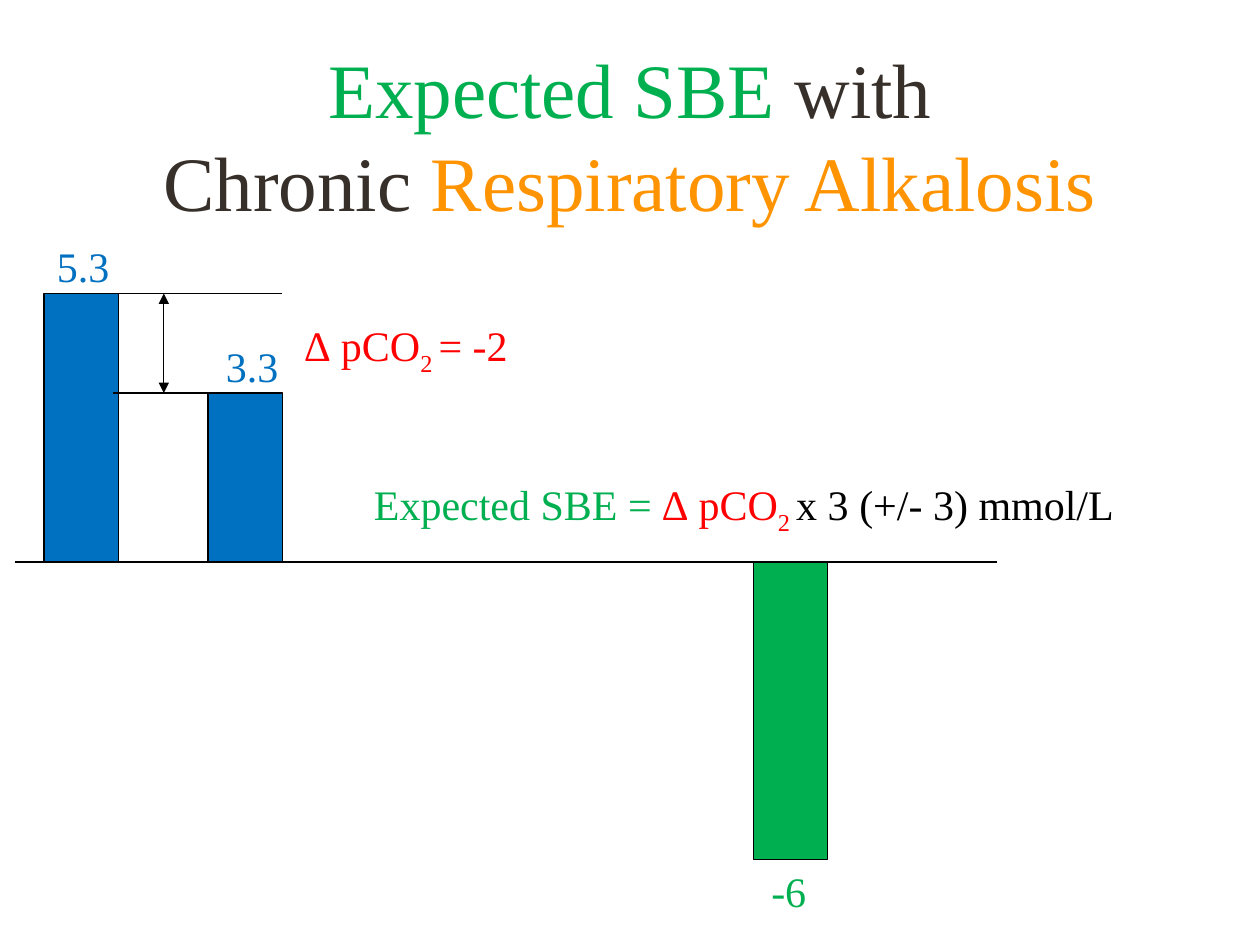
"""Build the slide on expected SBE with chronic respiratory alkalosis."""
from dataclasses import dataclass

import pptx
import pptx.dml.color
import pptx.enum.shapes
import pptx.enum.text
import pptx.util
from lxml import etree
from pptx.util import Inches


@dataclass(frozen=True)
class Theme:
    font: str = "Times New Roman"
    title_size: int = 44
    body_size: int = 24
    line_width: float = 0.75
    green: str = "00B050"
    blue: str = "0070C0"
    red: str = "FF0000"
    orange: str = "FF9300"
    brown: str = "37302A"
    black: str = "000000"


theme = Theme()
rgb = pptx.dml.color.RGBColor.from_string
drawing_ns = "{http://schemas.openxmlformats.org/drawingml/2006/main}"
align = pptx.enum.text.PP_ALIGN

deck = pptx.Presentation()
deck.slide_width, deck.slide_height = Inches(10), Inches(7.5)
slide = deck.slides.add_slide(deck.slide_layouts[6])


def add_text(place, lines, size=theme.body_size, alignment=align.CENTER, wrap=False):
    box = slide.shapes.add_textbox(*map(Inches, place))
    frame = box.text_frame
    frame.word_wrap = wrap
    paragraph = frame.paragraphs[0]
    paragraph.alignment = alignment
    for index, line in enumerate(lines):
        if index:
            paragraph.add_line_break()
        for wording, color, *baseline in line:
            run = paragraph.add_run()
            run.text = wording
            run.font.name = theme.font
            run.font.size = pptx.util.Pt(size)
            run.font.color.rgb = rgb(color)
            if baseline:
                run.font._element.set("baseline", str(baseline[0]))
    return frame


def add_line(start, end):
    line = slide.shapes.add_connector(
        pptx.enum.shapes.MSO_CONNECTOR.STRAIGHT, *map(Inches, start + end))
    line.line.color.rgb = rgb(theme.black)
    line.line.width = pptx.util.Pt(theme.line_width)
    etree.SubElement(line._element.spPr, drawing_ns + "effectLst")
    return line


title = add_text(
    (0, 0.44, 10, 1.25),
    [[("Expected SBE ", theme.green), ("with", theme.brown)],
     [("Chronic ", theme.brown), ("Respiratory Alkalosis", theme.orange)]],
    size=theme.title_size, wrap=True)
title.vertical_anchor = pptx.enum.text.MSO_ANCHOR.MIDDLE

baseline_y, normal_y, lowered_y = 4.46, 2.33, 3.12
bar_width = 0.59
bars = [
    (0.35, normal_y, baseline_y, theme.blue),
    (1.65, lowered_y, baseline_y, theme.blue),
    (5.98, baseline_y, 6.82, theme.green),
]
for left, top, bottom, color in bars:
    bar = slide.shapes.add_shape(
        pptx.enum.shapes.MSO_SHAPE.RECTANGLE,
        *map(Inches, (left, top, bar_width, bottom - top)))
    bar.shadow.inherit = False
    bar.fill.solid()
    bar.fill.fore_color.rgb = rgb(color)
    bar.line.color.rgb = rgb(theme.black)
    bar.line.width = pptx.util.Pt(theme.line_width)

add_line((0.12, baseline_y), (7.91, baseline_y))
add_line((0.35, normal_y), (2.24, normal_y))
add_line((0.9, lowered_y), (2.2, lowered_y))
difference = add_line((1.3, lowered_y), (1.3, normal_y))
for arrow_end in ("headEnd", "tailEnd"):
    etree.SubElement(difference.line._get_or_add_ln(), drawing_ns + arrow_end, type="triangle")

bar_values = [
    ((0.35, 1.86, 0.62, 0.51), "5.3", theme.blue),
    ((1.69, 2.65, 0.62, 0.51), "3.3", theme.blue),
    ((6.02, 6.82, 0.48, 0.51), "-6", theme.green),
]
for place, value, color in bar_values:
    add_text(place, [[(value, color)]])

delta_pco2 = [("∆ pCO", theme.red), ("2 ", theme.red, -25000)]
add_text((2.32, 2.49, 1.85, 0.51), [[*delta_pco2, ("= -2", theme.red)]],
         alignment=align.LEFT)
add_text((2.87, 3.75, 6.14, 0.51),
         [[("Expected SBE = ", theme.green), *delta_pco2, ("x 3 (+/- 3) mmol/L", theme.black)]],
         alignment=align.LEFT, wrap=True)

deck.save("out.pptx")
